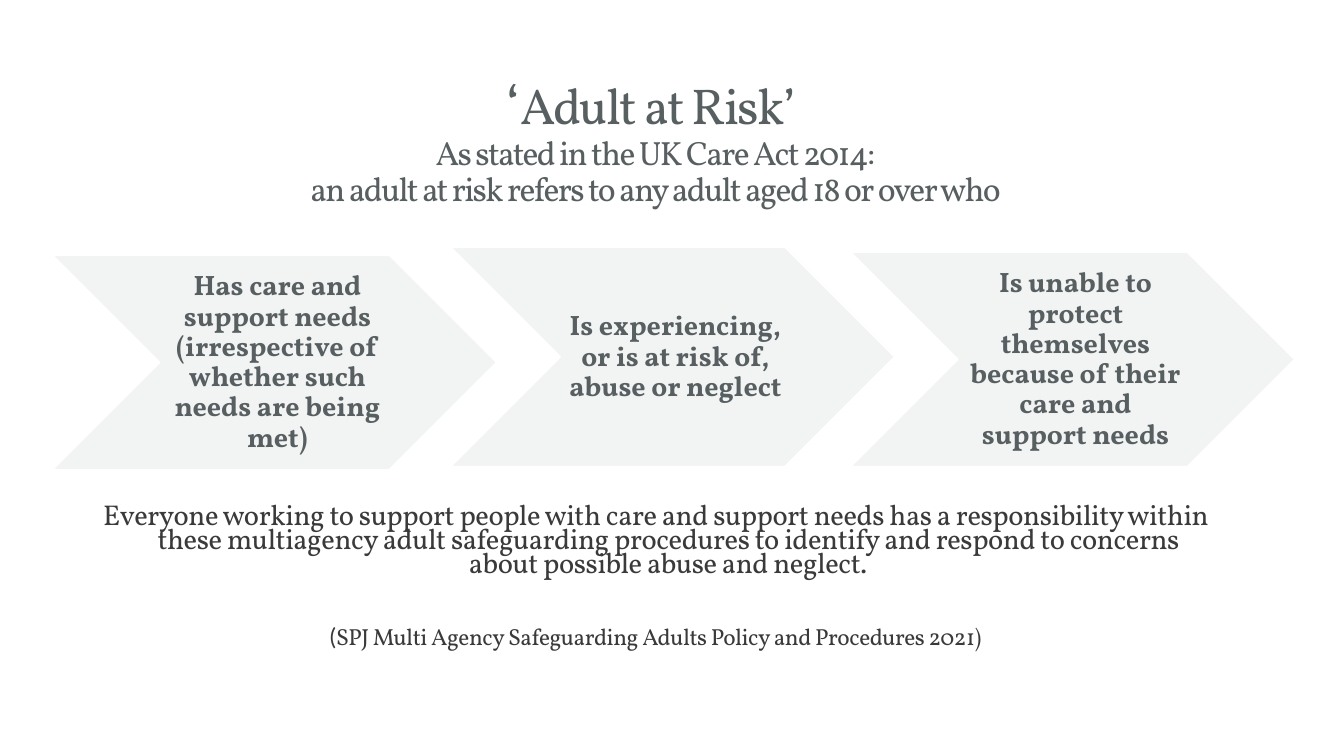
import pptx
import pptx.util
import pptx.dml.color
import pptx.enum.shapes
import pptx.enum.text

Pt = pptx.util.Pt
RGBColor = pptx.dml.color.RGBColor

SLATE = RGBColor(0x57, 0x5F, 0x61)
CHARCOAL = RGBColor(0x3A, 0x3A, 0x3A)
MIST = RGBColor(0xF2, 0xF3, 0xF3)
WHITE = RGBColor(0xFF, 0xFF, 0xFF)
SERIF, SANS = "Vollkorn", "Lato"

HEADING = [[
    ("‘", 40, SERIF),
    ("Adult at Risk’ \n", 36, SERIF),
    ("As stated in the UK Care Act 2014:\n"
     "an adult at risk refers to any adult aged 18 or over who", 24, SERIF),
]]
DUTY = [
    [("Everyone working to support people with care and support needs has a "
      "responsibility within these multiagency adult safeguarding procedures "
      "to identify and respond to concerns about possible abuse and neglect.", 20.4, SERIF)],
    [("(", 16.6, SANS),
     ("SPJ Multi Agency Safeguarding Adults Policy and Procedures 2021)", 16.6, SERIF)],
]
CRITERIA = [
    ("Has care and support needs (irrespective of whether such needs are being met)", 52, 255, 215),
    ("Is experiencing, or is at risk of, abuse or neglect", 450, 247, 220),
    ("Is unable to protect themselves because of their care and support needs", 850, 252, 215),
]
CRITERION_WIDTH = 445
COLUMN_LEFT, COLUMN_WIDTH = 93, 1125
HANGING = 25
SOURCE_GAP = 37


def px(length):
    return round(length * 914400 / 100.8)


def write(frame, paragraphs, spacing, tracking, font_format):
    frame.word_wrap = True
    for index, runs in enumerate(paragraphs):
        paragraph = frame.paragraphs[0] if index == 0 else frame.add_paragraph()
        paragraph.alignment = pptx.enum.text.PP_ALIGN.CENTER
        paragraph.line_spacing = spacing
        for words, size, face in runs:
            for number, line in enumerate(words.split("\n")):
                if number:
                    paragraph.add_line_break()
                if not line:
                    continue
                run = paragraph.add_run()
                run.text = line
                run.font.color.rgb = font_format["color"]
                for name, value in {"size": Pt(size), "name": face,
                                    "bold": font_format["bold"]}.items():
                    setattr(run.font, name, value)
                if tracking:
                    run.font._element.set("spc", str(tracking))


deck = pptx.Presentation()
deck.slide_width, deck.slide_height = px(1344), px(756)
slide = deck.slides.add_slide(deck.slide_layouts[6])

heading = slide.shapes.add_textbox(px(COLUMN_LEFT), px(71), px(COLUMN_WIDTH), px(157))
write(heading.text_frame, HEADING, 0.9, -120, {"color": SLATE, "bold": False})

duty = slide.shapes.add_textbox(px(COLUMN_LEFT), px(501), px(COLUMN_WIDTH), px(154))
write(duty.text_frame, DUTY, 0.7, -30, {"color": CHARCOAL, "bold": False})
for paragraph in duty.text_frame.paragraphs:
    properties = paragraph._p.get_or_add_pPr()
    properties.set("marL", str(px(HANGING)))
    properties.set("indent", str(-px(HANGING)))
duty.text_frame.paragraphs[1].space_before = Pt(SOURCE_GAP)

for words, left, top, height in CRITERIA:
    criterion = slide.shapes.add_shape(
        pptx.enum.shapes.MSO_SHAPE.CHEVRON, px(left), px(top), px(CRITERION_WIDTH), px(height))
    criterion.shadow.inherit = False
    criterion.fill.solid()
    criterion.fill.fore_color.rgb = MIST
    criterion.line.color.rgb = WHITE
    criterion.line.width = Pt(1.5)
    for name, value in {"margin_left": px(9), "margin_right": px(3),
                        "margin_top": px(3), "margin_bottom": px(3),
                        "vertical_anchor": pptx.enum.text.MSO_ANCHOR.MIDDLE}.items():
        setattr(criterion.text_frame, name, value)
    write(criterion.text_frame, [[(words, 20, SERIF)]], 0.9, 0, {"color": SLATE, "bold": True})

deck.save("out.pptx")
